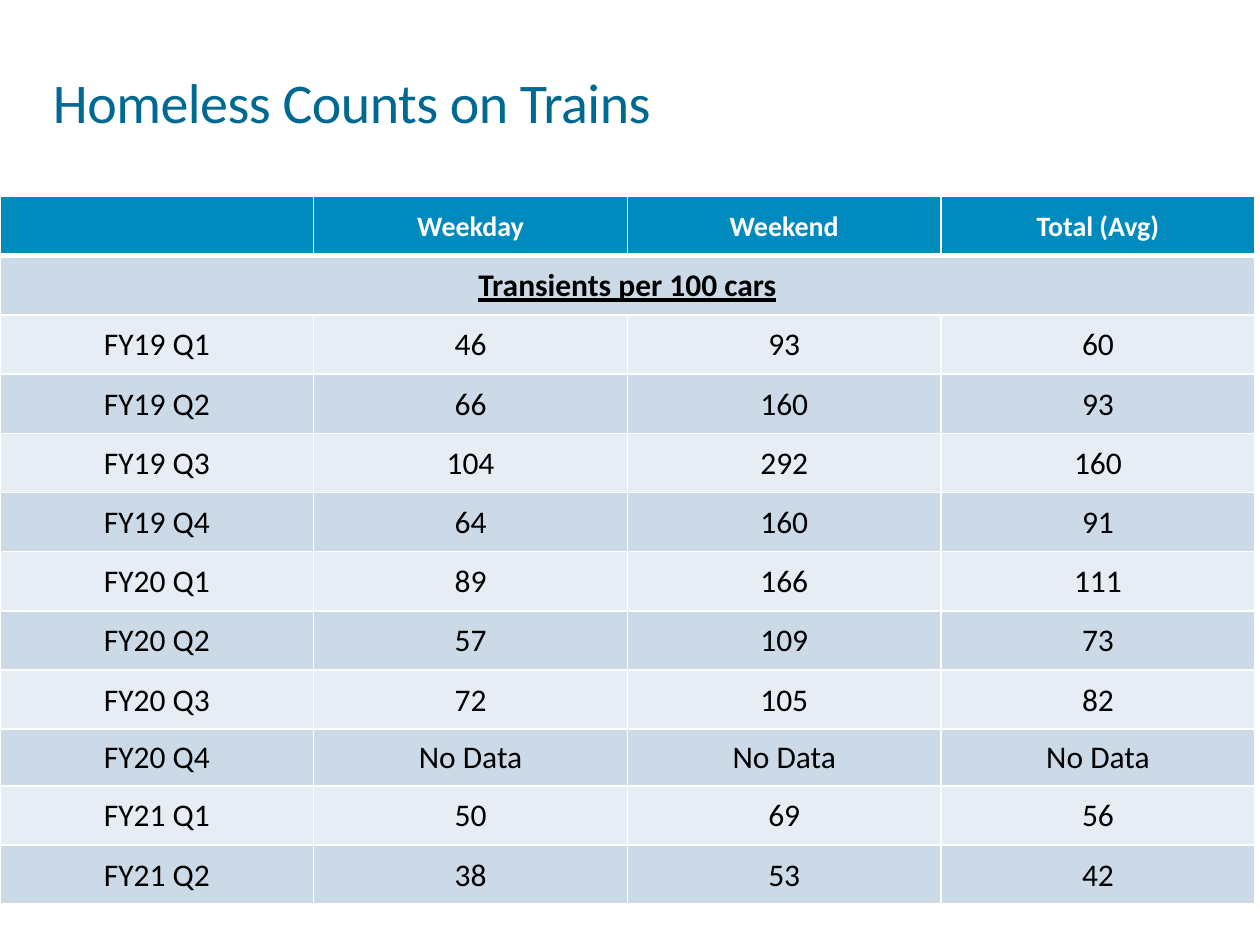
from dataclasses import dataclass

from lxml.etree import SubElement
from pptx import Presentation
from pptx.dml.color import RGBColor
from pptx.enum.text import MSO_ANCHOR, PP_ALIGN
from pptx.oxml.ns import qn
from pptx.util import Inches, Pt

TITLE = "Homeless Counts on Trains"
HEADINGS = ("", "Weekday", "Weekend", "Total (Avg)")
MEASURE = "Transients per 100 cars"
COUNTS = [
    ("FY19 Q1", 46, 93, 60),
    ("FY19 Q2", 66, 160, 93),
    ("FY19 Q3", 104, 292, 160),
    ("FY19 Q4", 64, 160, 91),
    ("FY20 Q1", 89, 166, 111),
    ("FY20 Q2", 57, 109, 73),
    ("FY20 Q3", 72, 105, 82),
    ("FY20 Q4", "No Data", "No Data", "No Data"),
    ("FY21 Q1", 50, 69, 56),
    ("FY21 Q2", 38, 53, 42),
]


@dataclass(frozen=True)
class Theme:
    font: str = "Calibri"
    title: str = "006991"
    header: str = "008ABE"
    bands: tuple = ("CCDAE8", "E7EDF4")
    ink: str = "000000"
    white: str = "FFFFFF"
    title_size: int = 32
    header_size: int = 16
    body_size: int = 18
    rule: int = 1
    header_rule: int = 3


THEME = Theme()
SLIDE_W, SLIDE_H = 10, 7.5
TABLE_TOP = 1.56
COLUMN_W = 2.49
ROW_H = 0.47
NO_DATA_ROW_H = 0.45


def style_font(font, size, color, bold=False, underline=False):
    font.name = THEME.font
    font.size = Pt(size)
    font.bold = bold
    font.underline = underline
    font.color.rgb = RGBColor.from_string(color)


def draw_borders(cell, bottom):
    properties = cell._tc.get_or_add_tcPr()
    for side, width in zip("LRTB", (THEME.rule, THEME.rule, THEME.rule, bottom)):
        line = SubElement(properties, qn(f"a:ln{side}"), w=str(Pt(width)))
        SubElement(SubElement(line, qn("a:solidFill")), qn("a:srgbClr"), val=THEME.white)


def fill_cell(cell, content, row):
    header, measure = row == 0, row == 1
    draw_borders(cell, THEME.header_rule if header else THEME.rule)
    cell.fill.solid()
    cell.fill.fore_color.rgb = RGBColor.from_string(
        THEME.header if header else THEME.bands[(row - 1) % 2])
    cell.margin_left = cell.margin_right = cell.margin_top = Inches(0.01)
    cell.margin_bottom = 0
    cell.vertical_anchor = MSO_ANCHOR.MIDDLE
    cell.text = str(content)
    label = cell.text_frame.paragraphs[0]
    label.alignment = PP_ALIGN.CENTER
    style_font(label.font,
               THEME.header_size if header else THEME.body_size,
               THEME.white if header else THEME.ink,
               bold=header or measure, underline=measure)


def add_title(slide):
    frame = slide.shapes.add_textbox(
        Inches(0.42), Inches(0.58), Inches(9.5), Inches(0.5)).text_frame
    frame.word_wrap = True
    frame.vertical_anchor = MSO_ANCHOR.MIDDLE
    frame.margin_left = frame.margin_right = frame.margin_top = frame.margin_bottom = 0
    heading = frame.paragraphs[0]
    heading.line_spacing = Pt(34.6)
    words = heading.add_run()
    words.text = TITLE
    style_font(heading.font, THEME.title_size, THEME.title)
    words._r.get_or_add_rPr().set("spc", "-30")


def add_counts(slide):
    rows = [HEADINGS, (MEASURE, "", "", ""), *COUNTS]
    heights = [NO_DATA_ROW_H if "No Data" in entry else ROW_H for entry in rows]
    counts = slide.shapes.add_table(
        len(rows), len(HEADINGS), 0, Inches(TABLE_TOP),
        Inches(COLUMN_W * len(HEADINGS)), Inches(sum(heights))).table
    for column in counts.columns:
        column.width = Inches(COLUMN_W)
    for row, (entry, height) in enumerate(zip(rows, heights)):
        counts.rows[row].height = Inches(height)
        for column, content in enumerate(entry):
            fill_cell(counts.cell(row, column), content, row)
    counts.cell(1, 0).merge(counts.cell(1, len(HEADINGS) - 1))


def main():
    deck = Presentation()
    deck.slide_width, deck.slide_height = Inches(SLIDE_W), Inches(SLIDE_H)
    slide = deck.slides.add_slide(deck.slide_layouts[6])
    add_title(slide)
    add_counts(slide)
    deck.save("out.pptx")


if __name__ == "__main__":
    main()
